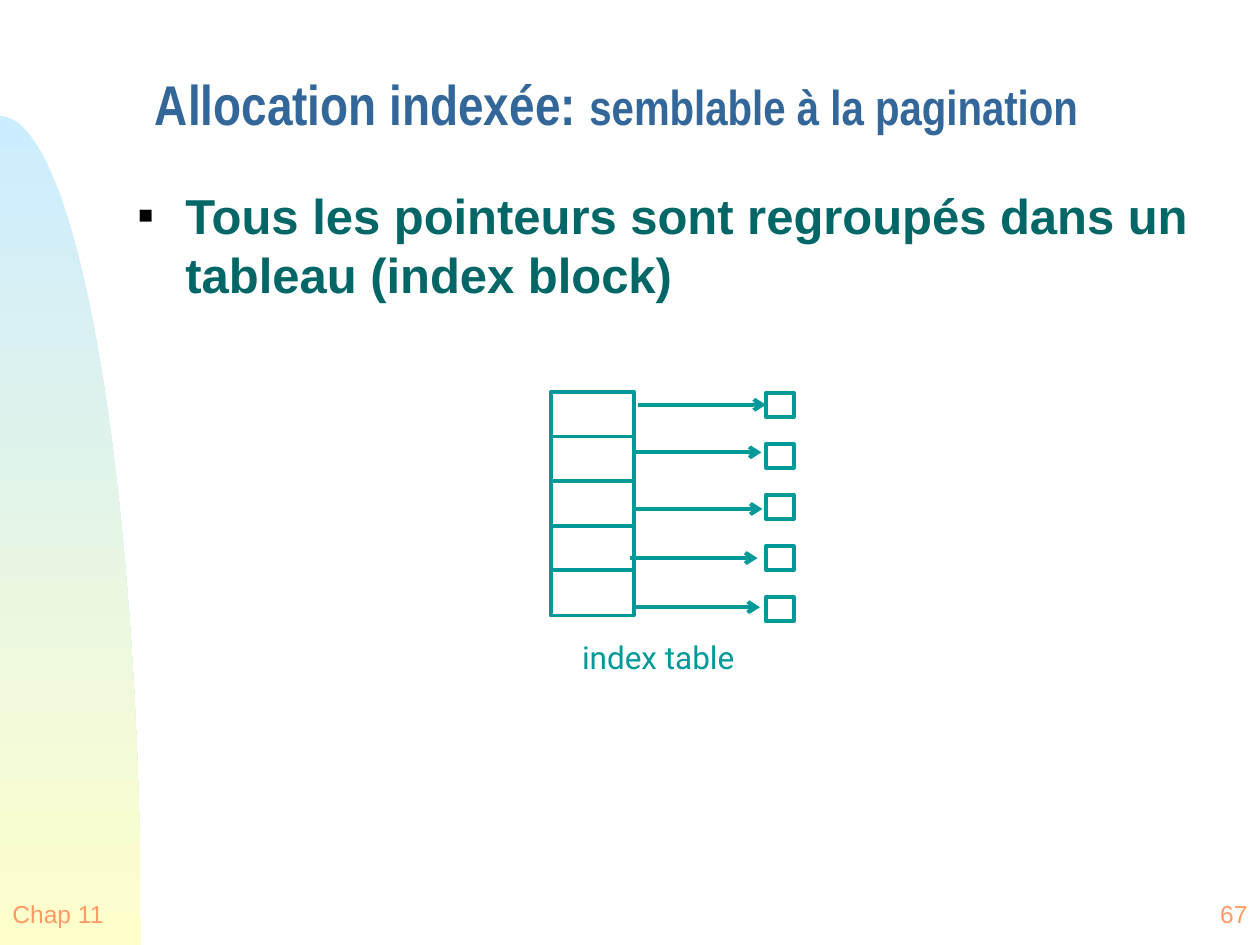
"""Build the slide on indexed allocation, with its index table and block pointers."""
import math

import lxml.etree
import pptx
import pptx.dml.color
import pptx.enum.shapes
import pptx.enum.text
import pptx.oxml.ns
import pptx.util

Cm = pptx.util.Cm
Pt = pptx.util.Pt
ALIGN = pptx.enum.text.PP_ALIGN
ANCHOR = pptx.enum.text.MSO_ANCHOR
TEAL = "009999"


def color(value):
    return pptx.dml.color.RGBColor.from_string(value)


def add_span(para, text, size, font, value, bold=False):
    span = para.add_run()
    span.text = text
    span.font.size = Pt(size)
    span.font.name = font
    span.font.bold = bold
    span.font.color.rgb = color(value)


deck = pptx.Presentation()
deck.slide_width = Cm(25.4)
deck.slide_height = Cm(19.05)
page = deck.slides.add_slide(deck.slide_layouts[5])
shapes = page.shapes

title = shapes.title
title.left, title.top, title.width, title.height = Cm(2.87), Cm(0.91), Cm(21.89), Cm(2.67)
title.text_frame.auto_size = pptx.enum.text.MSO_AUTO_SIZE.NONE
title.text_frame.vertical_anchor = ANCHOR.MIDDLE
para = title.text_frame.paragraphs[0]
para.alignment = ALIGN.LEFT
para.line_spacing = 0.7
add_span(para, "Allocation indexée: ", 32, "Arial Narrow", "336699", True)
add_span(para, "semblable à la pagination", 28, "Arial Narrow", "336699", True)

curve_width, curve_height, curve_steps = Cm(2.84), Cm(16.71), 60
bottom = deck.slide_height
angles = [math.pi / 2 * step / curve_steps for step in range(1, curve_steps + 1)]
builder = shapes.build_freeform(0, bottom - curve_height)
builder.add_line_segments(
    [(round(curve_width * math.sin(a)), round(bottom - curve_height * math.cos(a))) for a in angles]
    + [(0, bottom)]
)
curve = builder.convert_to_shape()
curve.shadow.inherit = False
curve.line.fill.background()
curve.fill.gradient()
curve.fill.gradient_angle = 270
for stop, value in zip(curve.fill.gradient_stops, ("CCECFF", "FFFFCC")):
    stop.color.rgb = color(value)

labels = [
    ("Chap 11", 0, 17.78, 2.34, 1.27, 14, "Arial", "FF9966", ALIGN.CENTER),
    ("67", 23.62, 17.78, 1.78, 1.27, 14, "Arial", "FF9966", ALIGN.RIGHT),
    ("index table", 11.48, 12.73, 3.58, 1.02, 18, "Roboto", TEAL, ALIGN.CENTER),
]
for text, left, top, width, height, size, font, value, alignment in labels:
    box = shapes.add_textbox(Cm(left), Cm(top), Cm(width), Cm(height))
    box.text_frame.word_wrap = False
    box.text_frame.vertical_anchor = ANCHOR.MIDDLE
    para = box.text_frame.paragraphs[0]
    para.alignment = alignment
    add_span(para, text, size, font, value)

body = shapes.add_textbox(Cm(2.54), Cm(3.61), Cm(21.89), Cm(13.23))
body.text_frame.word_wrap = True
para = body.text_frame.paragraphs[0]
para.space_before = Pt(5)
add_span(para, "Tous les pointeurs sont regroupés dans un tableau (index block)", 28, "Arial", "006666", True)
properties = para._p.get_or_add_pPr()
properties.set("marL", str(Cm(0.95)))
properties.set("indent", str(-Cm(0.95)))
qn = pptx.oxml.ns.qn
bullet_color = lxml.etree.SubElement(properties, qn("a:buClr"))
lxml.etree.SubElement(bullet_color, qn("a:srgbClr"), val="010000")
lxml.etree.SubElement(properties, qn("a:buSzPct"), val="50000")
lxml.etree.SubElement(properties, qn("a:buFont"), typeface="Arial")
lxml.etree.SubElement(properties, qn("a:buChar"), char="■")

blocks = []
for left, top, step, width, height in ((11.1, 7.9, 0.9, 1.68, 0.91), (15.44, 7.92, 1.03, 0.56, 0.48)):
    for row in range(5):
        block = shapes.add_shape(
            pptx.enum.shapes.MSO_SHAPE.RECTANGLE, Cm(left), Cm(top + row * step), Cm(width), Cm(height)
        )
        block.shadow.inherit = False
        block.fill.solid()
        block.fill.fore_color.rgb = color("FFFFFF")
        block.line.color.rgb = color(TEAL)
        block.line.width = Pt(2.25)
        blocks.append(block)

arrow_length = 2.57
arrows = []
for left, top in ((12.87, 8.16), (12.78, 9.12), (12.8, 10.26), (12.7, 11.25), (12.75, 12.24)):
    arrow = shapes.add_connector(
        pptx.enum.shapes.MSO_CONNECTOR.STRAIGHT, Cm(left), Cm(top), Cm(left + arrow_length), Cm(top)
    )
    arrow.line.color.rgb = color(TEAL)
    arrow.line.width = Pt(2.25)
    lxml.etree.SubElement(arrow.line._get_or_add_ln(), qn("a:tailEnd"), type="arrow")
    lxml.etree.SubElement(arrow._element.spPr, qn("a:effectLst"))
    arrows.append(arrow)
arrows[0].end_connect(blocks[5], 1)

deck.save("out.pptx")
